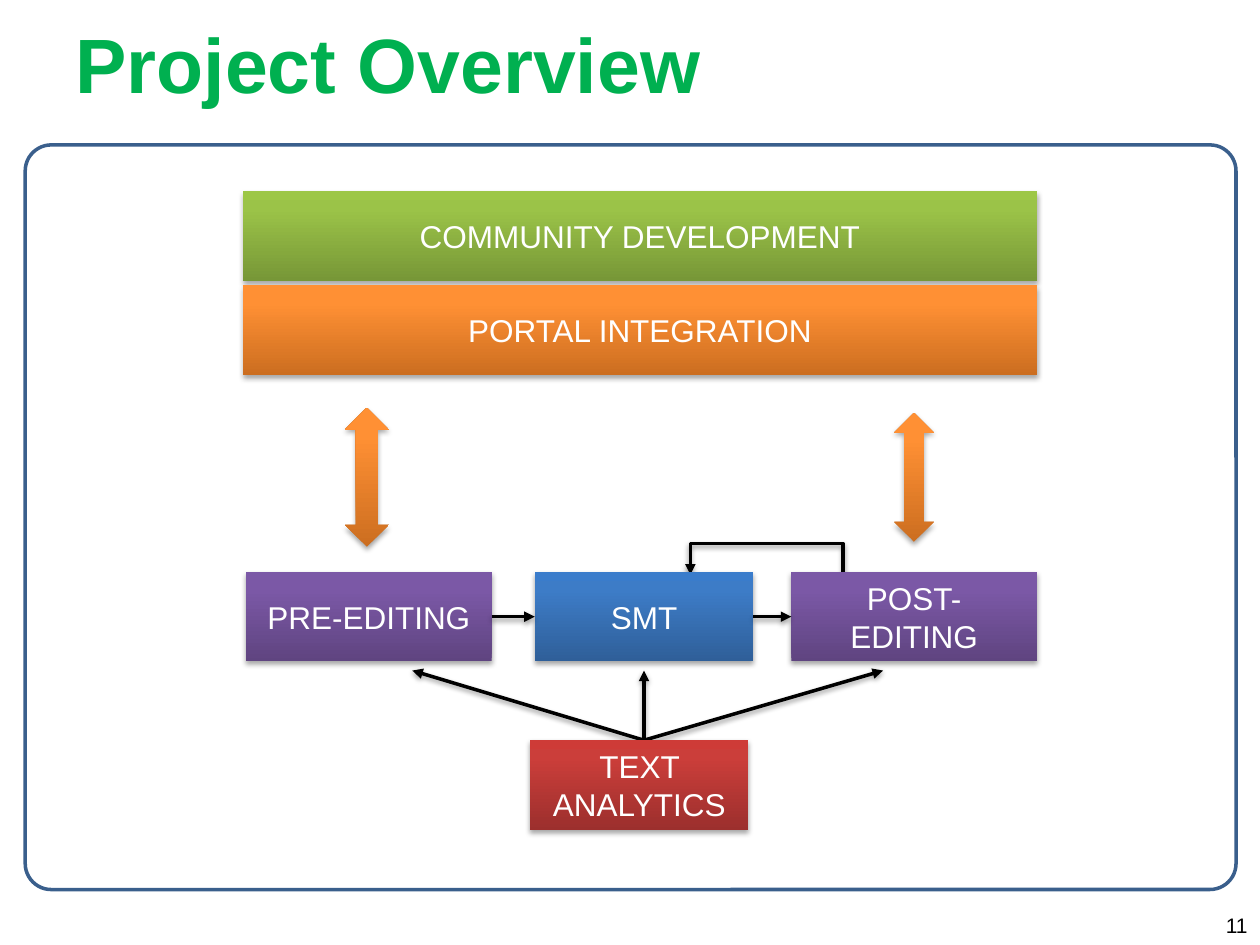
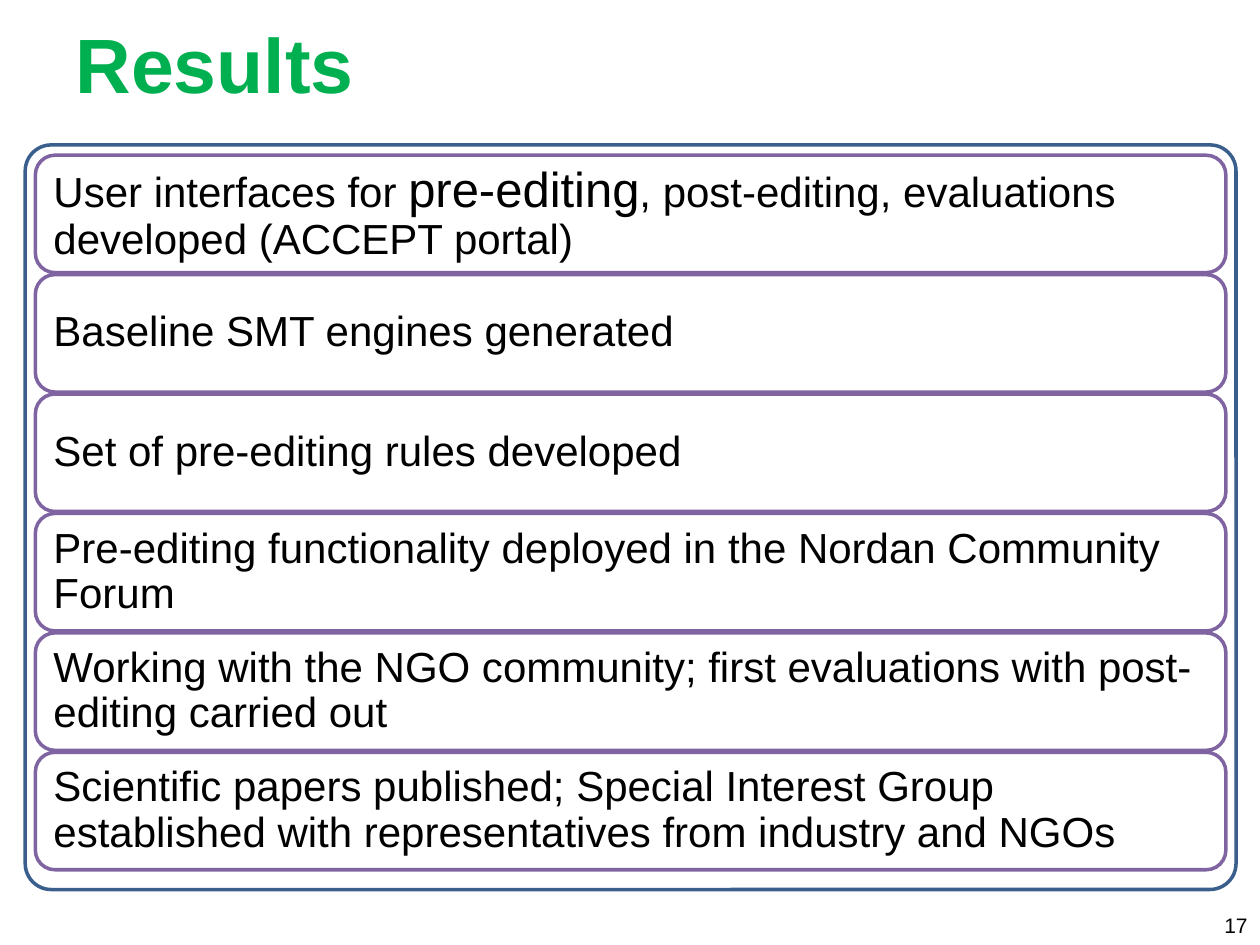
"""Build the project overview diagram and the results list."""
from copy import deepcopy

from lxml.etree import SubElement
from pptx import Presentation
from pptx.dml.color import RGBColor
from pptx.enum.shapes import MSO_CONNECTOR, MSO_SHAPE
from pptx.enum.text import MSO_ANCHOR, PP_ALIGN
from pptx.oxml.ns import qn
from pptx.util import Pt

FONT = "Arial"
BLACK, WHITE, TITLE_GREEN = "000000", "FFFFFF", "00B050"
FRAME_BLUE, ROW_PURPLE = "3A5F8C", "8064A2"
GREEN = ("779737", "9BC348", "9DC746")
ORANGE = ("CC6E20", "FF9034", "FF9136")
PURPLE = ("5F4480", "7B58A6", "7C57A8")
BLUE = ("2F5F99", "3D7CC7", "3A7CCB")
RED = ("9C2F2D", "CB3E3A", "CE3B37")
GRADIENT_POSITIONS = (0, 0.8, 1)

BOX_HEIGHT = 51.2
STEP_TOP = 326.8
BAND_LEFT, BAND_WIDTH = 138.9, 453.6
ROW_LEFT, ROW_TOP, ROW_WIDTH, ROW_HEIGHT = 20.2, 88.7, 680.3, 67.1
ROW_PITCH = 68.24

RESULTS = [
    [("User interfaces for ", 24), ("pre-editing", 28),
     (", post-editing, evaluations developed (ACCEPT portal)", 24)],
    [("Baseline SMT engines generated", 24)],
    [("Set of pre-editing rules developed", 24)],
    [("Pre-editing functionality deployed in the Nordan Community Forum", 24)],
    [("Working with the NGO community; first evaluations with post-editing carried out", 24)],
    [("Scientific papers published; Special Interest Group established with "
      "representatives from industry and NGOs", 24)],
]


def rgb(value):
    """Turn a hex string into a colour."""
    return RGBColor.from_string(value)


def points(*lengths):
    """Convert lengths in points to slide units."""
    return [Pt(length) for length in lengths]


def add_span(para, text, size, color, bold=False):
    """Add one formatted run to a paragraph."""
    span = para.add_run()
    span.text = text
    span.font.name = FONT
    span.font.size = Pt(size)
    span.font.bold = bold
    span.font.color.rgb = rgb(color)


def cast_shadow(shape, opacity, distance):
    """Give a shape or connector a soft shadow falling downwards."""
    effects = SubElement(shape._element.spPr, qn("a:effectLst"))
    shadow = SubElement(effects, qn("a:outerShdw"), blurRad=str(Pt(3.1)),
                        dist=str(Pt(distance)), dir="5400000", rotWithShape="0")
    color = SubElement(shadow, qn("a:srgbClr"), val=BLACK)
    SubElement(color, qn("a:alpha"), val=str(opacity * 1000))


def fill_gradient(shape, colors):
    """Fill a shape with three stops running from bottom to top."""
    shape.fill.gradient()
    shape.fill.gradient_angle = 90
    stop_list = shape._element.spPr.find(qn("a:gradFill")).find(qn("a:gsLst"))
    stop_list.append(deepcopy(stop_list[-1]))
    for stop, position, color in zip(shape.fill.gradient_stops, GRADIENT_POSITIONS, colors):
        stop.position = position
        stop.color.rgb = rgb(color)


def add_gradient_shape(page, kind, left, top, width, height, colors):
    """Add a borderless gradient shape with a shadow."""
    shape = page.shapes.add_shape(kind, *points(left, top, width, height))
    fill_gradient(shape, colors)
    shape.line.fill.background()
    cast_shadow(shape, 35, 1.8)
    return shape


def add_box(page, text, left, top, width, colors):
    """Add a labelled box of the diagram."""
    box = add_gradient_shape(page, MSO_SHAPE.RECTANGLE, left, top, width, BOX_HEIGHT, colors)
    box.text_frame.vertical_anchor = MSO_ANCHOR.MIDDLE
    para = box.text_frame.paragraphs[0]
    para.alignment = PP_ALIGN.CENTER
    add_span(para, text, 18, WHITE)
    return box


def add_outline(page, left, top, width, height, color, rounding):
    """Add a white rounded rectangle with a coloured border."""
    outline = page.shapes.add_shape(MSO_SHAPE.ROUNDED_RECTANGLE,
                                    *points(left, top, width, height))
    outline.adjustments[0] = rounding
    outline.shadow.inherit = False
    outline.fill.solid()
    outline.fill.fore_color.rgb = rgb(WHITE)
    outline.line.color.rgb = rgb(color)
    outline.line.width = Pt(2)
    return outline


def add_arrow(page, start, end, kind=MSO_CONNECTOR.STRAIGHT):
    """Add a black connector with an arrowhead at its end."""
    arrow = page.shapes.add_connector(kind, *points(*start, *end))
    arrow.line.color.rgb = rgb(BLACK)
    arrow.line.width = Pt(2)
    SubElement(arrow.line._get_or_add_ln(), qn("a:tailEnd"), type="triangle")
    cast_shadow(arrow, 38, 1.6)
    return arrow


def add_feedback_arrow(page):
    """Add the bent arrow that leads from post-editing back to SMT."""
    arrow = add_arrow(page, (394.5, 328.4), (499.6, 329.4), MSO_CONNECTOR.ELBOW)
    properties = arrow._element.spPr
    properties.find(qn("a:xfrm")).set("rot", "10800000")
    geometry = properties.find(qn("a:prstGeom"))
    geometry.set("prst", "bentConnector4")
    guides = geometry.find(qn("a:avLst"))
    if guides is None:
        guides = SubElement(geometry, qn("a:avLst"))
    for name, value in (("adj1", 17000), ("adj2", 1899900)):
        SubElement(guides, qn("a:gd"), name=name, fmla=f"val {value}")


def join_boxes(page, source, target):
    """Connect the right side of one box to the left side of the next."""
    arrow = add_arrow(page, (0, 0), (0, 0))
    arrow.begin_connect(source, 3)
    arrow.end_connect(target, 1)


def add_page(deck, title, number):
    """Add a page with the shared title, frame and page number."""
    page = deck.slides.add_slide(deck.slide_layouts[5])
    heading = page.shapes.title
    heading.left, heading.top, heading.width, heading.height = points(36, 5.8, 648, 59.8)
    heading.text_frame.vertical_anchor = MSO_ANCHOR.MIDDLE
    para = heading.text_frame.paragraphs[0]
    para.alignment = PP_ALIGN.LEFT
    add_span(para, title, 44, TITLE_GREEN, bold=True)
    add_outline(page, 14.4, 82.8, 691.9, 425.5, FRAME_BLUE, 0.035)
    footer = page.shapes.add_textbox(*points(685.4, 517.7, 34.6, 22.3))
    footer.text_frame.word_wrap = True
    para = footer.text_frame.paragraphs[0]
    para.alignment = PP_ALIGN.RIGHT
    add_span(para, number, 12, BLACK)
    return page


def add_overview(deck):
    """Draw the project overview diagram."""
    page = add_page(deck, "Project Overview", "11")
    add_box(page, "COMMUNITY DEVELOPMENT", BAND_LEFT, 109.2, BAND_WIDTH, GREEN)
    add_box(page, "PORTAL INTEGRATION", BAND_LEFT, 163, BAND_WIDTH, ORANGE)
    for place in ((197.2, 233, 25, 79.4), (511, 236, 22.6, 73.6)):
        add_gradient_shape(page, MSO_SHAPE.UP_DOWN_ARROW, *place, ORANGE)
    add_feedback_arrow(page)
    pre_editing = add_box(page, "PRE-EDITING", 140.6, STEP_TOP, 140.4, PURPLE)
    translation = add_box(page, "SMT", 305.6, STEP_TOP, 124.8, BLUE)
    post_editing = add_box(page, "POST-EDITING", 452.2, STEP_TOP, 140.4, PURPLE)
    join_boxes(page, pre_editing, translation)
    join_boxes(page, translation, post_editing)
    for target in (235.6, 368, 504.6):
        add_arrow(page, (368, 423), (target, 383.2))
    add_box(page, "TEXT ANALYTICS", 302.9, 423, 124.8, RED)


def add_results(deck):
    """List the results in a stack of outlined rows."""
    page = add_page(deck, "Results", "17")
    for index, spans in enumerate(RESULTS):
        row = add_outline(page, ROW_LEFT, ROW_TOP + index * ROW_PITCH,
                          ROW_WIDTH, ROW_HEIGHT, ROW_PURPLE, 0.1667)
        frame = row.text_frame
        frame.margin_left = frame.margin_right = Pt(7.2)
        frame.margin_top = frame.margin_bottom = Pt(7.2)
        frame.vertical_anchor = MSO_ANCHOR.MIDDLE
        para = frame.paragraphs[0]
        para.alignment = PP_ALIGN.LEFT
        para.line_spacing = 0.9
        for text, size in spans:
            add_span(para, text, size, BLACK)


def main():
    """Build and save the deck."""
    deck = Presentation()
    deck.slide_width, deck.slide_height = points(720, 540)
    add_overview(deck)
    add_results(deck)
    deck.save("out.pptx")


if __name__ == "__main__":
    main()
